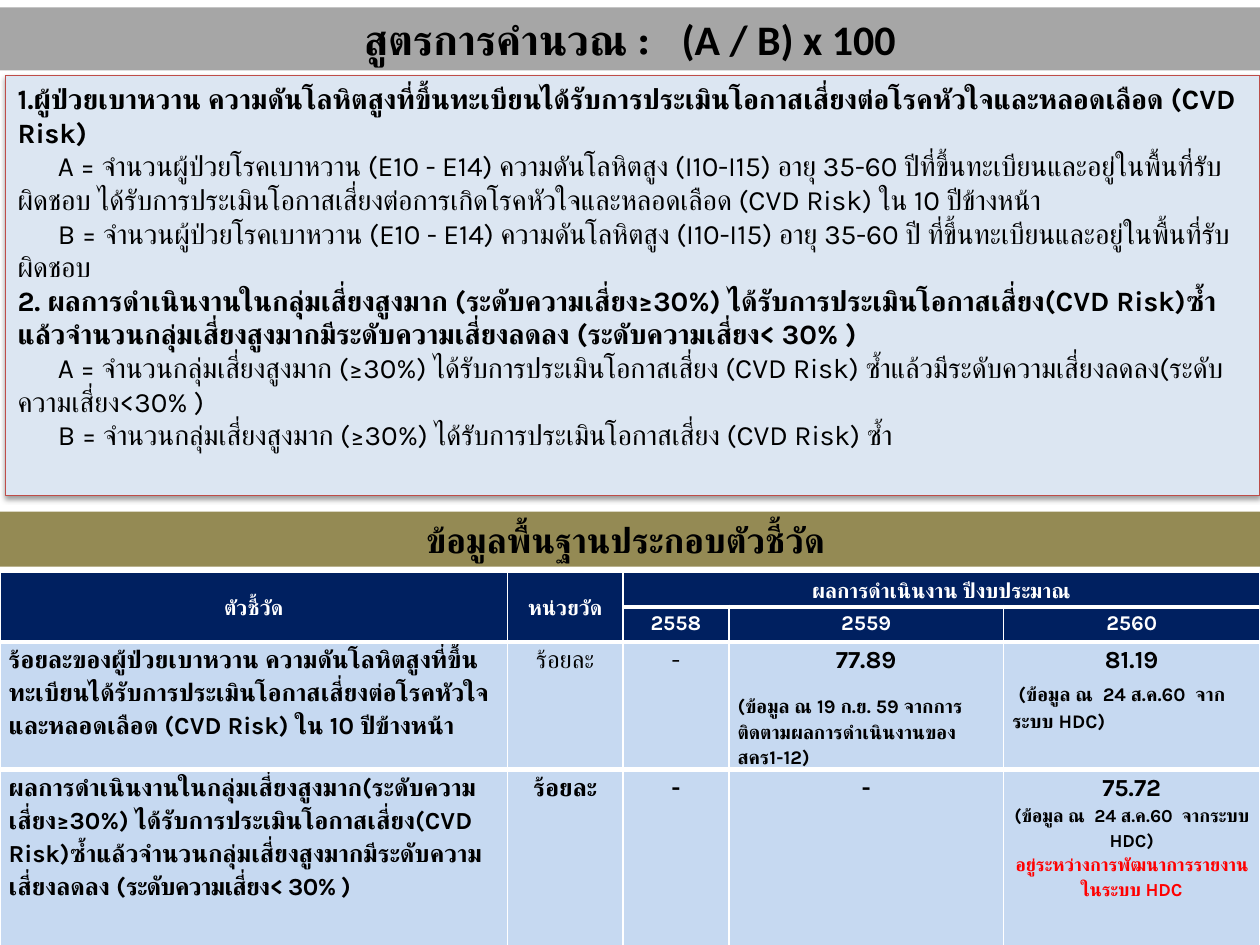
import pptx
import pptx.util
import pptx.dml.color
import pptx.enum.shapes
import pptx.enum.text
import pptx.oxml
import pptx.oxml.ns

Pt = pptx.util.Pt
RGBColor = pptx.dml.color.RGBColor
PP_ALIGN = pptx.enum.text.PP_ALIGN
ANCHOR = pptx.enum.text.MSO_ANCHOR
LEFT, CENTER = PP_ALIGN.LEFT, PP_ALIGN.CENTER
qn = pptx.oxml.ns.qn

BLACK = RGBColor(0x00, 0x00, 0x00)
WHITE = RGBColor(0xFF, 0xFF, 0xFF)
RED = RGBColor(0xFF, 0x00, 0x00)
GRAY = RGBColor(0xA6, 0xA6, 0xA6)
OLIVE = RGBColor(0x94, 0x8A, 0x54)
PALE_BLUE = RGBColor(0xDC, 0xE6, 0xF2)
BRICK = RGBColor(0xBF, 0x4C, 0x48)
NAVY = RGBColor(0x00, 0x20, 0x60)
LIGHT_BLUE = RGBColor(0xC6, 0xD9, 0xF1)
FONT = "Karla"


def run(text, size, bold=True, color=BLACK, font=FONT, spacing=0):
    return dict(text=text, size=size, bold=bold, color=color, font=font, spacing=spacing)


def line(*runs, align=CENTER, after=0, indent=0, leading=1.15):
    return dict(runs=runs, align=align, after=after, indent=indent, leading=leading)


def heading(text):
    return [line(run(text, 12, color=WHITE))]


# Content
FORMULA_TITLE = [line(run("สูตรการคำนวณ :   ", 24),
                      run("(A / B) x 100", 24, font="Calibri"), leading=None)]
DATA_TITLE = [line(run("ข้อมูลพื้นฐานประกอบตัวชี้วัด ", 20), leading=None)]
DEFINITIONS = [  # (is a heading, text)
    (True, "1.ผู้ป่วยเบาหวาน ความดันโลหิตสูงที่ขึ้นทะเบียนได้รับการประเมินโอกาสเสี่ยงต่อโรคหัวใจและหลอดเลือด (CVD Risk)"),
    (False, "A = จำนวนผู้ป่วยโรคเบาหวาน (E10 - E14) ความดันโลหิตสูง (I10-I15) อายุ 35-60 ปีที่ขึ้นทะเบียนและอยู่ในพื้นที่รับผิดชอบ ได้รับการประเมินโอกาสเสี่ยงต่อการเกิดโรคหัวใจและหลอดเลือด (CVD Risk) ใน 10 ปีข้างหน้า"),
    (False, "B = จำนวนผู้ป่วยโรคเบาหวาน (E10 - E14) ความดันโลหิตสูง (I10-I15) อายุ 35-60 ปี ที่ขึ้นทะเบียนและอยู่ในพื้นที่รับผิดชอบ"),
    (True, "2. ผลการดำเนินงานในกลุ่มเสี่ยงสูงมาก (ระดับความเสี่ยง≥30%) ได้รับการประเมินโอกาสเสี่ยง(CVD Risk)ซ้ำแล้วจำนวนกลุ่มเสี่ยงสูงมากมีระดับความเสี่ยงลดลง (ระดับความเสี่ยง< 30% )"),
    (False, "A = จำนวนกลุ่มเสี่ยงสูงมาก (≥30%) ได้รับการประเมินโอกาสเสี่ยง (CVD Risk) ซ้ำแล้วมีระดับความเสี่ยงลดลง(ระดับความเสี่ยง<30% )"),
    (False, "B = จำนวนกลุ่มเสี่ยงสูงมาก (≥30%) ได้รับการประเมินโอกาสเสี่ยง (CVD Risk) ซ้ำ"),
]
COLUMN_WIDTHS = [290, 66, 60.5, 157, 146.5]
ROW_HEIGHTS = [20, 20, 62, 104.5]
MERGES = [(0, 0, 1, 0), (0, 1, 1, 1), (0, 2, 0, 4)]
TABLE = [
    [heading("ตัวชี้วัด"), heading("หน่วยวัด"), heading("ผลการดำเนินงาน ปีงบประมาณ"), None, None],
    [None, None, heading("2558"), heading("2559"), heading("2560")],
    [
        [line(run("ร้อยละของผู้ป่วยเบาหวาน ความดันโลหิตสูงที่ขึ้นทะเบียนได้รับการประเมินโอกาสเสี่ยงต่อโรคหัวใจและหลอดเลือด (CVD Risk) ใน 10 ปีข้างหน้า", 14), align=LEFT)],
        [line(run("ร้อยละ", 14, bold=False))],
        [line(run("-", 14, bold=False), after=10)],
        [line(run("77.89", 14), after=10),
         line(run("(ข้อมูล ณ 19 ก.ย. 59 จากการติดตามผลการดำเนินงานของ สคร1-12)", 11), align=LEFT)],
        [line(run("81.19", 14)),
         line(run(" ", 14), run("(ข้อมูล ณ  24 ส.ค.60  จากระบบ HDC)", 11), align=LEFT)],
    ],
    [
        [line(run("ผลการดำเนินงานในกลุ่มเสี่ยงสูงมาก(ระดับความเสี่ยง≥30%) ได้รับการประเมินโอกาสเสี่ยง(CVD Risk)ซ้ำแล้วจำนวนกลุ่มเสี่ยงสูงมากมีระดับความเสี่ยงลดลง ", 14),
              run("(ระดับความเสี่ยง< 30% )", 14, spacing=-0.4), align=LEFT)],
        [line(run("ร้อยละ", 14))],
        [line(run("-", 14))],
        [line(run("-", 14))],
        [line(run("75.72", 14)),
         line(run("(ข้อมูล ณ  24 ส.ค.60  จากระบบ HDC)", 10.5)),
         line(run("อยู่ระหว่างการพัฒนาการรายงานในระบบ HDC", 10.5, color=RED))],
    ],
]


def write(text_frame, lines):
    text_frame.word_wrap = True
    for index, item in enumerate(lines):
        paragraph = text_frame.add_paragraph() if index else text_frame.paragraphs[0]
        paragraph.alignment = item["align"]
        if item["leading"]:
            paragraph.line_spacing = item["leading"]
        paragraph.space_after = Pt(item["after"])
        if item["indent"]:
            paragraph._p.get_or_add_pPr().set("indent", str(Pt(item["indent"])))
        for part in item["runs"]:
            piece = paragraph.add_run()
            piece.text = part["text"]
            font = piece.font
            font.size, font.bold, font.name = Pt(part["size"]), part["bold"], part["font"]
            font.color.rgb = part["color"]
            properties = piece._r.get_or_add_rPr()
            # Thai text takes the complex-script font
            properties.append(properties.makeelement(qn("a:cs"), {"typeface": part["font"]}))
            if part["spacing"]:
                properties.set("spc", str(round(part["spacing"] * 100)))


def add_panel(slide, left, top, width, height, fill, lines, anchor):
    shape = slide.shapes.add_shape(pptx.enum.shapes.MSO_SHAPE.RECTANGLE,
                                   Pt(left), Pt(top), Pt(width), Pt(height))
    shape.shadow.inherit = False
    shape.fill.solid()
    shape.fill.fore_color.rgb = fill
    shape.line.fill.background()
    shape.text_frame.vertical_anchor = anchor
    write(shape.text_frame, lines)
    return shape


def add_shadow(shape):
    effects = shape._element.spPr.find(qn("a:effectLst"))
    effects.append(pptx.oxml.parse_xml(
        f'<a:outerShdw {pptx.oxml.ns.nsdecls("a")} blurRad="{Pt(3.1)}" dist="{Pt(1.6)}" '
        'dir="5400000" rotWithShape="0"><a:srgbClr val="000000"><a:alpha val="38000"/>'
        '</a:srgbClr></a:outerShdw>'))


def set_borders(cell, top, bottom):
    properties = cell._tc.get_or_add_tcPr()
    widths = [("lnL", 1), ("lnR", 1), ("lnT", top), ("lnB", bottom)]
    for position, (tag, width) in enumerate(widths):
        properties.insert(position, pptx.oxml.parse_xml(
            f'<a:{tag} {pptx.oxml.ns.nsdecls("a")} w="{Pt(width)}">'
            f'<a:solidFill><a:srgbClr val="{WHITE}"/></a:solidFill></a:{tag}>'))


def add_results_table(slide, left, top):
    table = slide.shapes.add_table(len(TABLE), len(COLUMN_WIDTHS), Pt(left), Pt(top),
                                   Pt(sum(COLUMN_WIDTHS)), Pt(sum(ROW_HEIGHTS))).table
    for column, width in zip(table.columns, COLUMN_WIDTHS):
        column.width = Pt(width)
    for row, height in zip(table.rows, ROW_HEIGHTS):
        row.height = Pt(height)
    for first_row, first_column, last_row, last_column in MERGES:
        table.cell(first_row, first_column).merge(table.cell(last_row, last_column))
    last = len(TABLE) - 1
    for r, cells in enumerate(TABLE):
        for c, lines in enumerate(cells):
            cell = table.cell(r, c)
            cell.margin_left = cell.margin_right = Pt(5)
            cell.margin_top = cell.margin_bottom = 0
            cell.vertical_anchor = ANCHOR.MIDDLE if r == 0 else ANCHOR.TOP
            cell.fill.solid()
            cell.fill.fore_color.rgb = NAVY if r < 2 else LIGHT_BLUE
            set_borders(cell, 3 if r else 1, 3 if r < last else 1)
            if lines:
                write(cell.text_frame, lines)


def main():
    presentation = pptx.Presentation()
    presentation.slide_width, presentation.slide_height = Pt(720), Pt(540)
    slide = presentation.slides.add_slide(presentation.slide_layouts[6])

    # Definitions of A and B
    definitions = [line(run(text, 16, bold=is_heading), align=LEFT, leading=None,
                        indent=0 if is_heading else 23)
                   for is_heading, text in DEFINITIONS]
    panel = add_panel(slide, 3, 43.2, 717, 240, PALE_BLUE, definitions, ANCHOR.TOP)
    panel.line.color.rgb = BRICK
    panel.line.width = Pt(0.75)
    add_shadow(panel)

    # Title bands
    add_panel(slide, 0, 4.3, 720, 36, GRAY, FORMULA_TITLE, ANCHOR.MIDDLE)
    add_panel(slide, 0, 292.3, 720, 31.5, OLIVE, DATA_TITLE, ANCHOR.MIDDLE)

    # Results by fiscal year
    add_results_table(slide, 0, 326.9)
    presentation.save("out.pptx")


if __name__ == "__main__":
    main()
